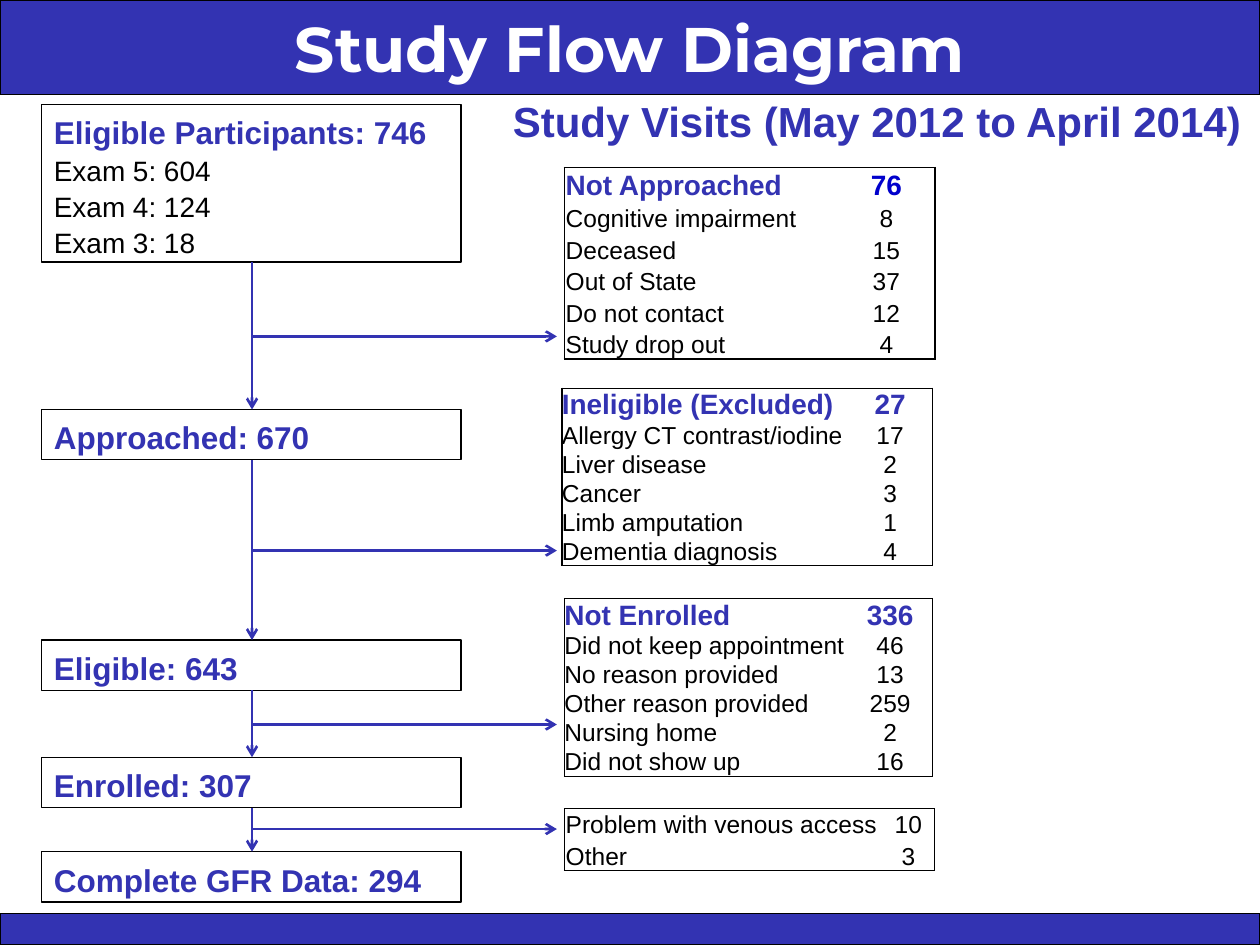
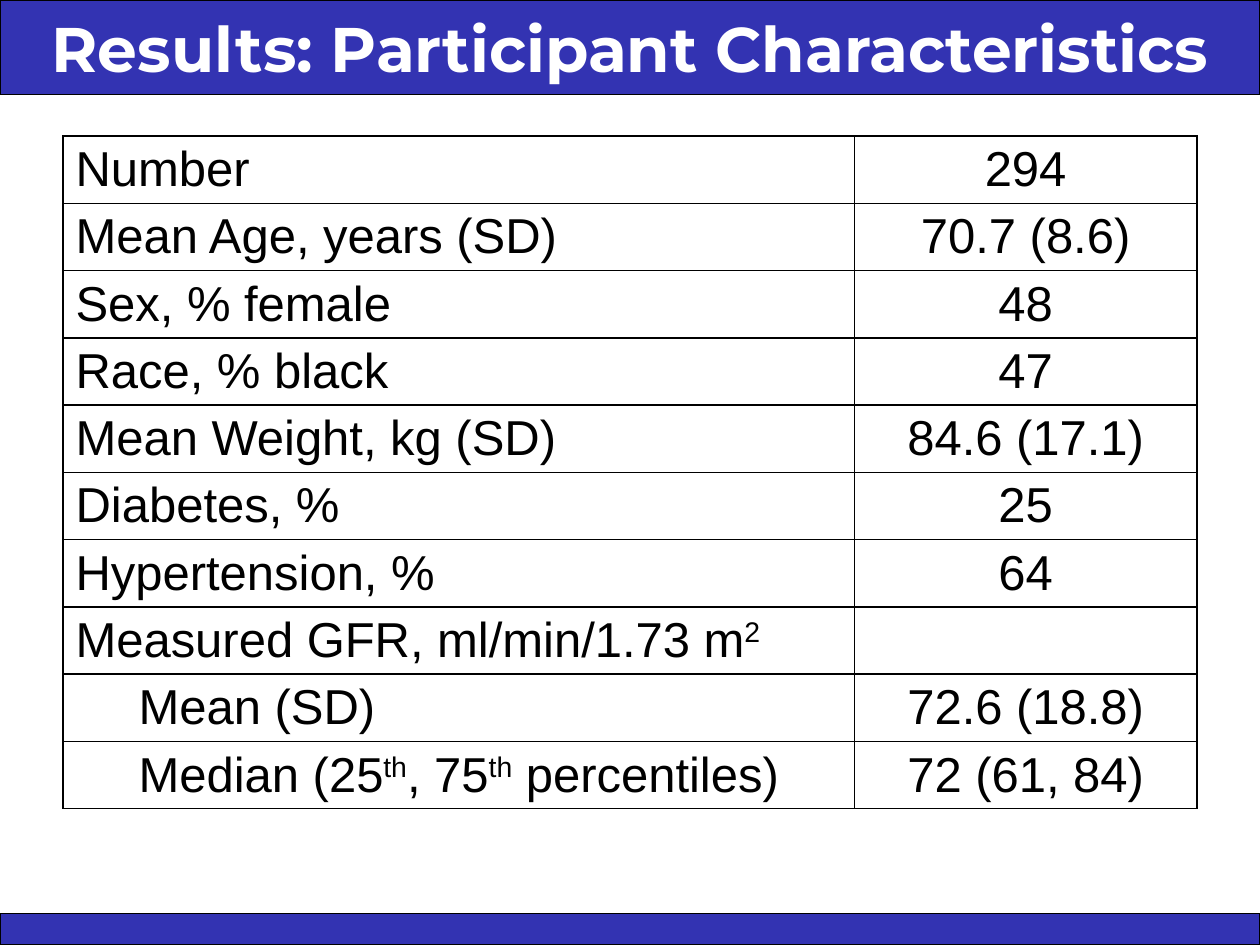
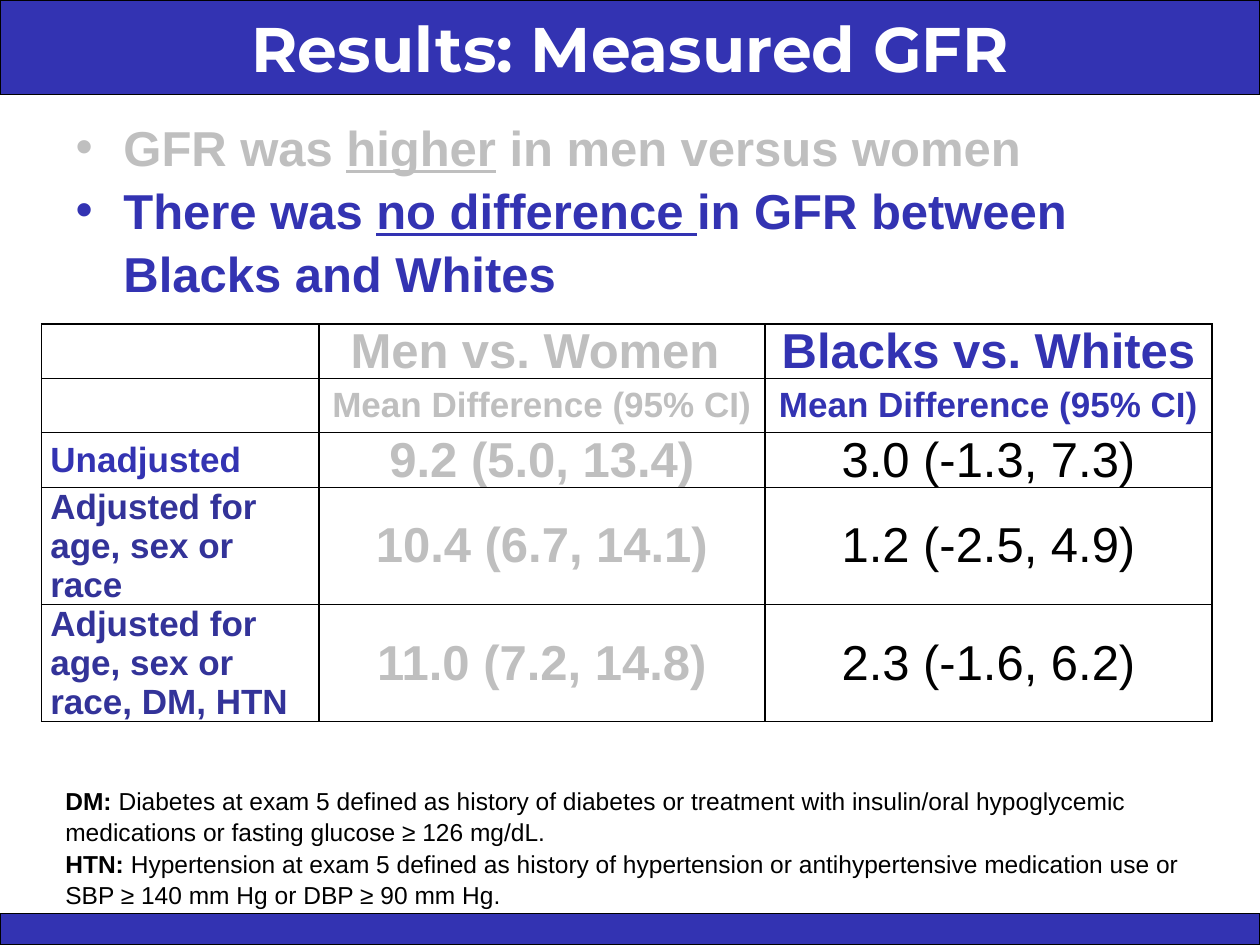
from lxml.etree import SubElement
from pptx import Presentation
from pptx.dml.color import RGBColor
from pptx.enum.shapes import MSO_CONNECTOR, MSO_SHAPE
from pptx.enum.text import MSO_ANCHOR, MSO_AUTO_SIZE, PP_ALIGN
from pptx.oxml.ns import qn
from pptx.util import Inches, Pt

COLORS = {
    "blue": "3333B2",
    "count": "0000CC",
    "indigo": "333399",
    "grey": "BFBFBF",
    "black": "000000",
    "white": "FFFFFF",
}
TITLE_FONT, BODY_FONT = "Montserrat", "Arial"
TITLE_ONLY, TITLE_AND_BODY = 5, 1
BAND_HEIGHT, FOOTER_HEIGHT = 0.75, 0.25
TEXT_SPACING = 1.07
FLOW_X, SIDE_X = 2, 4.42

# Flow boxes: top, height, heading, further lines
STAGES = [
    (0.83, 1.25, "Eligible Participants: 746",
     ["Exam 5: 604", "Exam 4: 124", "Exam 3: 18"]),
    (3.25, 0.4, "Approached: 670", []),
    (5.08, 0.4, "Eligible: 643", []),
    (6.01, 0.4, "Enrolled: 307", []),
    (6.76, 0.4, "Complete GFR Data: 294", []),
]
SIDE_ARROWS = [2.67, 4.37, 5.75, 6.58]

NOT_APPROACHED = [
    ("Not Approached", "76"), ("Cognitive impairment", "8"),
    ("Deceased", "15"), ("Out of State", "37"),
    ("Do not contact", "12"), ("Study drop out", "4"),
]
INELIGIBLE = [
    ("Ineligible (Excluded)", "27"), ("Allergy CT contrast/iodine", "17"),
    ("Liver disease", "2"), ("Cancer", "3"),
    ("Limb amputation", "1"), ("Dementia diagnosis", "4"),
]
NOT_ENROLLED = [
    ("Not Enrolled", "336"), ("Did not keep appointment", "46"),
    ("No reason provided", "13"), ("Other reason provided", "259"),
    ("Nursing home", "2"), ("Did not show up", "16"),
]
INCOMPLETE = [("Problem with venous access", "10"), ("Other", "3")]

# Label pieces alternate between normal and raised text
CHARACTERISTICS = [
    (["Number"], "294"),
    (["Mean Age, years (SD)"], "70.7 (8.6)"),
    (["Sex, % female"], "48"),
    (["Race, % black"], "47"),
    (["Mean Weight, kg (SD)"], "84.6 (17.1)"),
    (["Diabetes, %"], "25"),
    (["Hypertension, %"], "64"),
    (["Measured GFR, ml/min/1.73 m", "2"], ""),
    (["Mean (SD)"], "72.6 (18.8)"),
    (["Median (25", "th", ", 75", "th", " percentiles)"], "72 (61, 84)"),
]
INDENTED_FROM = 8

GFR_DIFFERENCES = [
    ("", "Men vs. Women ", "Blacks vs. Whites"),
    ("", "Mean Difference (95% CI)", "Mean Difference (95% CI)"),
    ("Unadjusted", "9.2 (5.0, 13.4)", "3.0 (-1.3, 7.3)"),
    ("Adjusted for age, sex or race", "10.4 (6.7, 14.1)", "1.2 (-2.5, 4.9)"),
    ("Adjusted for age, sex or race, DM, HTN", "11.0 (7.2, 14.8)", "2.3 (-1.6, 6.2)"),
]
# Each finding: colour, then text before, inside and after the underline
FINDINGS = [
    ("grey", ["GFR was ", "higher", " in men versus women"]),
    ("blue", ["There was ", "no difference ", "in GFR between Blacks and Whites"]),
]
DEFINITIONS = [
    ("DM: ", "Diabetes at exam 5 defined as history of diabetes or treatment with "
             "insulin/oral hypoglycemic medications or fasting glucose ≥ 126 mg/dL."),
    ("HTN: ", "Hypertension at exam 5 defined as history of hypertension or "
              "antihypertensive medication use or SBP ≥ 140 mm Hg or DBP ≥ 90 mm Hg."),
]


def rgb(color):
    return RGBColor.from_string(COLORS[color])


def inches(*lengths):
    return [Inches(length) for length in lengths]


def add_run(para, text, size, color="black", bold=False, underline=False,
            raised=False, font=BODY_FONT):
    span = para.add_run()
    span.text = text
    span.font.size = Pt(size)
    span.font.name = font
    span.font.bold = bold
    span.font.underline = underline
    span.font.color.rgb = rgb(color)
    if raised:
        span.font._element.set("baseline", "30000")


def next_para(frame, index):
    para = frame.paragraphs[0] if index == 0 else frame.add_paragraph()
    para.line_spacing = TEXT_SPACING
    return para


def set_indent(para, left, first=0):
    properties = para._p.get_or_add_pPr()
    properties.set("marL", str(Inches(left)))
    properties.set("indent", str(Inches(first)))


def outline(shape, color="black", width=0.75):
    shape.line.color.rgb = rgb(color)
    shape.line.width = Pt(width)


# Shared page parts
def add_master_bands(deck, page):
    """Place the top and bottom bands behind everything on the master."""
    anchor = deck.slide_master.placeholders[0].element
    bands = [(0, BAND_HEIGHT), (7.5 - FOOTER_HEIGHT, FOOTER_HEIGHT)]
    for number, (top, height) in enumerate(bands):
        band = page.shapes.add_shape(MSO_SHAPE.RECTANGLE, *inches(0, top, 10, height))
        band.shadow.inherit = False
        band.fill.solid()
        band.fill.fore_color.rgb = rgb("blue")
        outline(band)
        band.element.nvSpPr.cNvPr.set("id", str(20 + number))
        anchor.addprevious(band.element)


def place(shape, left, top, width, height):
    shape.left, shape.top, shape.width, shape.height = inches(left, top, width, height)


def add_page(deck, layout, title_text):
    page = deck.slides.add_slide(deck.slide_layouts[layout])
    title = page.shapes.title
    place(title, 0, 0, 10, BAND_HEIGHT)
    outline(title)
    frame = title.text_frame
    frame.auto_size = MSO_AUTO_SIZE.NONE
    frame.word_wrap = False
    frame.vertical_anchor = MSO_ANCHOR.MIDDLE
    para = frame.paragraphs[0]
    para.alignment = PP_ALIGN.CENTER
    add_run(para, title_text, 36, "white", bold=True, font=TITLE_FONT)
    return page


# Flow diagram parts
def add_stage(page, top, height, heading, lines):
    box = page.shapes.add_shape(MSO_SHAPE.RECTANGLE, *inches(0.33, top, 3.33, height))
    box.shadow.inherit = False
    box.fill.background()
    outline(box)
    frame = box.text_frame
    frame.word_wrap = True
    frame.vertical_anchor = MSO_ANCHOR.TOP
    for index, text in enumerate([heading] + lines):
        para = next_para(frame, index)
        para.alignment = PP_ALIGN.LEFT
        if index == 0:
            add_run(para, text, 18, "blue", bold=True)
        else:
            add_run(para, text, 16)


def add_arrow(page, *ends):
    arrow = page.shapes.add_connector(MSO_CONNECTOR.STRAIGHT, *inches(*ends))
    outline(arrow, "blue", 1.5)
    SubElement(arrow.line._get_or_add_ln(), qn("a:tailEnd"), type="arrow")
    SubElement(arrow.element.spPr, qn("a:effectLst"))


# Tables
def set_borders(cell, sides, width):
    """Draw the sides named among L, R, T and B, and clear the others."""
    properties = cell._tc.get_or_add_tcPr()
    for index, side in enumerate("LRTB"):
        border = SubElement(properties, qn("a:ln" + side), w=str(Pt(width)))
        properties.insert(index, border)
        if side in sides:
            fill = SubElement(border, qn("a:solidFill"))
            SubElement(fill, qn("a:srgbClr"), val=COLORS["black"])
        else:
            SubElement(border, qn("a:noFill"))


def add_grid(page, left, top, widths, heights):
    size = inches(left, top, sum(widths), sum(heights))
    table = page.shapes.add_table(len(heights), len(widths), *size).table
    table.first_row = table.horz_banding = False
    for column, width in zip(table.columns, widths):
        column.width = Inches(width)
    for row, height in zip(table.rows, heights):
        row.height = Inches(height)
    for cell in table.iter_cells():
        cell.fill.background()
    return table


def set_margins(cell, side, top, bottom=0):
    cell.margin_left = cell.margin_right = Inches(side)
    cell.margin_top, cell.margin_bottom = inches(top, bottom)


def add_count_table(page, left, top, widths, heights, rows, headed=True,
                    margin=0, border=0.75, count_color="blue"):
    table = add_grid(page, left, top, widths, heights)
    for r, row in enumerate(rows):
        is_heading = headed and r == 0
        for c, text in enumerate(row):
            cell = table.cell(r, c)
            set_margins(cell, margin, margin)
            cell.vertical_anchor = MSO_ANCHOR.BOTTOM
            sides = "LR"[c] + ("T" if r == 0 else "") + ("B" if r == len(rows) - 1 else "")
            set_borders(cell, sides, border)
            para = cell.text_frame.paragraphs[0]
            para.alignment = PP_ALIGN.CENTER if c else PP_ALIGN.LEFT
            if is_heading:
                add_run(para, text, 16, count_color if c else "blue", bold=True)
            else:
                add_run(para, text, 14)


def add_characteristics_table(page):
    table = add_grid(page, 0.5, 1.08, [6.28, 2.72], [0.53] * len(CHARACTERISTICS))
    for r, (pieces, value) in enumerate(CHARACTERISTICS):
        label, result = table.cell(r, 0), table.cell(r, 1)
        for cell in (label, result):
            set_borders(cell, "LRTB", 1)
        para = label.text_frame.paragraphs[0]
        if r >= INDENTED_FROM:
            set_indent(para, 0.5)
        for number, piece in enumerate(pieces):
            add_run(para, piece, 28, raised=number % 2 == 1)
        if value:
            para = result.text_frame.paragraphs[0]
            para.alignment = PP_ALIGN.CENTER
            add_run(para, value, 28)


def difference_style(r, c):
    """Size, colour and weight of a cell in the table of differences."""
    if c == 0:
        return 20, "blue" if r == 2 else "indigo", True
    size = 20 if r == 1 else 28
    if c == 1:
        return size, "grey", True
    return size, "blue" if r < 2 else "black", r < 2


def add_difference_table(page):
    heights = [0.43] * 3 + [0.93] * 2
    table = add_grid(page, 0.33, 2.57, [2.2, 3.54, 3.55], heights)
    for r, row in enumerate(GFR_DIFFERENCES):
        for c, text in enumerate(row):
            cell = table.cell(r, c)
            set_borders(cell, "LRTB", 1)
            set_margins(cell, 0.07, 0)
            cell.vertical_anchor = MSO_ANCHOR.MIDDLE if r else MSO_ANCHOR.TOP
            if text:
                para = cell.text_frame.paragraphs[0]
                para.alignment = PP_ALIGN.CENTER if c else PP_ALIGN.LEFT
                add_run(para, text, *difference_style(r, c))


# Text blocks
def add_subtitle(page, text):
    box = page.shapes.add_textbox(*inches(3.92, 0.58, 6.08, 0.75))
    box.text_frame.word_wrap = False
    box.text_frame.vertical_anchor = MSO_ANCHOR.MIDDLE
    para = box.text_frame.paragraphs[0]
    para.alignment = PP_ALIGN.CENTER
    add_run(para, text, 24, "blue", bold=True)


def add_findings(page):
    body = page.placeholders[1]
    place(body, 0.5, 0.85, 8.75, 1.51)
    frame = body.text_frame
    frame.auto_size = MSO_AUTO_SIZE.NONE
    for index, (color, pieces) in enumerate(FINDINGS):
        para = next_para(frame, index)
        para.space_before = Pt(0)
        set_indent(para, 0.38, -0.38)
        for number, piece in enumerate(pieces):
            add_run(para, piece, 28, color, bold=True, underline=number == 1)


def add_definitions(page):
    box = page.shapes.add_textbox(*inches(0.42, 6.17, 9.25, 1.04))
    box.text_frame.word_wrap = True
    for index, (term, meaning) in enumerate(DEFINITIONS):
        para = next_para(box.text_frame, index)
        add_run(para, term, 14, bold=True)
        add_run(para, meaning, 14)


# Pages
def build_flow_page(page):
    for stage in STAGES:
        add_stage(page, *stage)
    add_count_table(page, 4.48, 1.33, [2.17, 0.77], [0.27] + [0.25] * 5, NOT_APPROACHED,
                    margin=0.01, border=1, count_color="count")
    excluded_heights = [0.26] + [0.23] * 5
    add_count_table(page, 4.46, 3.08, [2.27, 0.67], excluded_heights, INELIGIBLE)
    add_count_table(page, 4.48, 4.75, [2.25, 0.67], excluded_heights, NOT_ENROLLED)
    add_count_table(page, 4.48, 6.42, [2.52, 0.42], [0.24, 0.25], INCOMPLETE,
                    headed=False, margin=0.01)
    for (top, height, *_), (next_top, *_) in zip(STAGES, STAGES[1:]):
        add_arrow(page, FLOW_X, top + height, FLOW_X, next_top)
    for y in SIDE_ARROWS:
        add_arrow(page, FLOW_X, y, SIDE_X, y)
    add_subtitle(page, "Study Visits (May 2012 to April 2014)")


def main():
    deck = Presentation()
    deck.slide_width, deck.slide_height = inches(10, 7.5)

    flow_page = add_page(deck, TITLE_ONLY, "Study Flow Diagram")
    add_master_bands(deck, flow_page)
    build_flow_page(flow_page)

    page = add_page(deck, TITLE_ONLY, "Results: Participant Characteristics")
    add_characteristics_table(page)

    page = add_page(deck, TITLE_AND_BODY, "Results: Measured GFR")
    add_difference_table(page)
    add_findings(page)
    add_definitions(page)

    deck.save("out.pptx")


if __name__ == "__main__":
    main()
